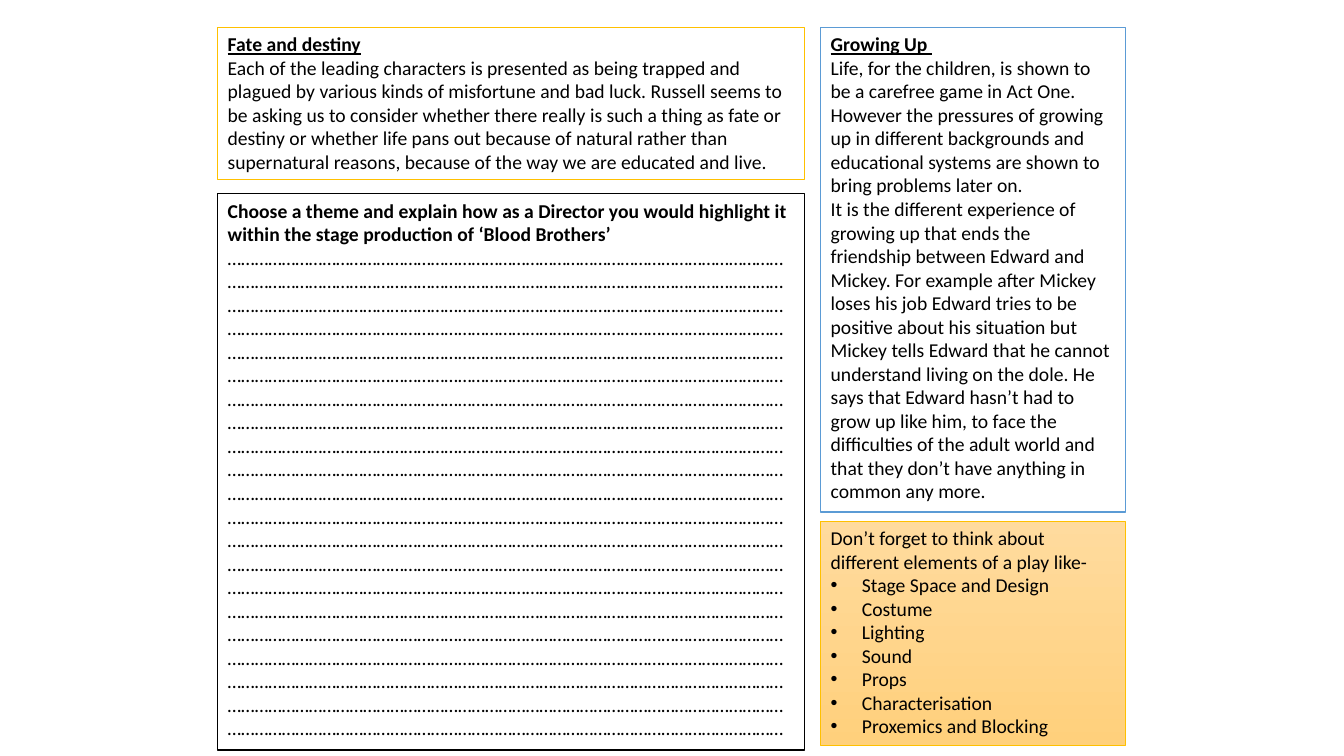
from lxml.etree import SubElement
from pptx import Presentation
from pptx.dml.color import RGBColor
from pptx.enum.text import MSO_AUTO_SIZE
from pptx.oxml.ns import qn
from pptx.util import Inches, Pt

BLACK = RGBColor(0x00, 0x00, 0x00)
WHITE = RGBColor(0xFF, 0xFF, 0xFF)
GOLD = RGBColor(0xFF, 0xC0, 0x00)
BLUE = RGBColor(0x5B, 0x9B, 0xD5)
LIGHT_ORANGE = RGBColor(0xFF, 0xDB, 0x9E)
ORANGE = RGBColor(0xFF, 0xD0, 0x7C)

LEFT_COLUMN, LEFT_WIDTH = 2.16, 5.82
RIGHT_COLUMN, RIGHT_WIDTH = 8.14, 3.02
BULLET_INDENT = Inches(0.31)
ANSWER_LINES = 21
ELLIPSES_PER_LINE = 41

FATE = [
    "Fate and destiny",
    "Each of the leading characters is presented as being trapped and plagued by "
    "various kinds of misfortune and bad luck. Russell seems to be asking us to "
    "consider whether there really is such a thing as fate or destiny or whether "
    "life pans out because of natural rather than supernatural reasons, because of "
    "the way we are educated and live.",
]
GROWING_UP = [
    "Growing Up ",
    "Life, for the children, is shown to be a carefree game in Act One. However the "
    "pressures of growing up in different backgrounds and educational systems are "
    "shown to bring problems later on.",
    "It is the different experience of growing up that ends the friendship between "
    "Edward and Mickey. For example after Mickey loses his job Edward tries to be "
    "positive about his situation but Mickey tells Edward that he cannot understand "
    "living on the dole. He says that Edward hasn’t had to grow up like him, to face "
    "the difficulties of the adult world and that they don’t have anything in common "
    "any more.",
]
TASK = [
    "Choose a theme and explain how as a Director you would highlight it within the "
    "stage production of ‘Blood Brothers’",
    "…" * ELLIPSES_PER_LINE * ANSWER_LINES,
]
REMINDER = [
    "Don’t forget to think about different elements of a play like-",
    "Stage Space and Design",
    "Costume",
    "Lighting",
    "Sound",
    "Props",
    "Characterisation",
    "Proxemics and Blocking",
]

presentation = Presentation()
presentation.slide_width = Inches(13.33)
presentation.slide_height = Inches(7.5)
slide = presentation.slides.add_slide(presentation.slide_layouts[6])


def add_panel(left, top, width, height, line_color, paragraphs, line_width=1):
    """Add an outlined white text box with one paragraph per string."""
    panel = slide.shapes.add_textbox(Inches(left), Inches(top), Inches(width), Inches(height))
    panel.fill.solid()
    panel.fill.fore_color.rgb = WHITE
    panel.line.color.rgb = line_color
    panel.line.width = Pt(line_width)
    text_frame = panel.text_frame
    text_frame.word_wrap = True
    text_frame.auto_size = MSO_AUTO_SIZE.SHAPE_TO_FIT_TEXT
    text_frame.text = "\n".join(paragraphs)
    for paragraph in text_frame.paragraphs:
        for run in paragraph.runs:
            run.font.name = "Calibri"
            run.font.size = Pt(14)
            run.font.color.rgb = BLACK
    return panel


fate = add_panel(LEFT_COLUMN, 0.27, LEFT_WIDTH, 1.51, GOLD, FATE)
growing_up = add_panel(RIGHT_COLUMN, 0.27, RIGHT_WIDTH, 4.81, BLUE, GROWING_UP)
task = add_panel(LEFT_COLUMN, 1.92, LEFT_WIDTH, 5.52, BLACK, TASK)
reminder = add_panel(RIGHT_COLUMN, 5.17, RIGHT_WIDTH, 2.22, GOLD, REMINDER, line_width=0.5)

for panel in (fate, growing_up, task):
    heading_font = panel.text_frame.paragraphs[0].runs[0].font
    heading_font.bold = True
    heading_font.underline = panel is not task

reminder.fill.gradient()
reminder.fill.gradient_angle = 270
for stop, color in zip(reminder.fill.gradient_stops, (LIGHT_ORANGE, ORANGE)):
    stop.color.rgb = color

for paragraph in reminder.text_frame.paragraphs[1:]:
    properties = paragraph._p.get_or_add_pPr()
    properties.set("marL", str(BULLET_INDENT))
    properties.set("indent", str(-BULLET_INDENT))
    SubElement(properties, qn("a:buFont"), typeface="Arial")
    SubElement(properties, qn("a:buChar"), char="•")

presentation.save("out.pptx")
